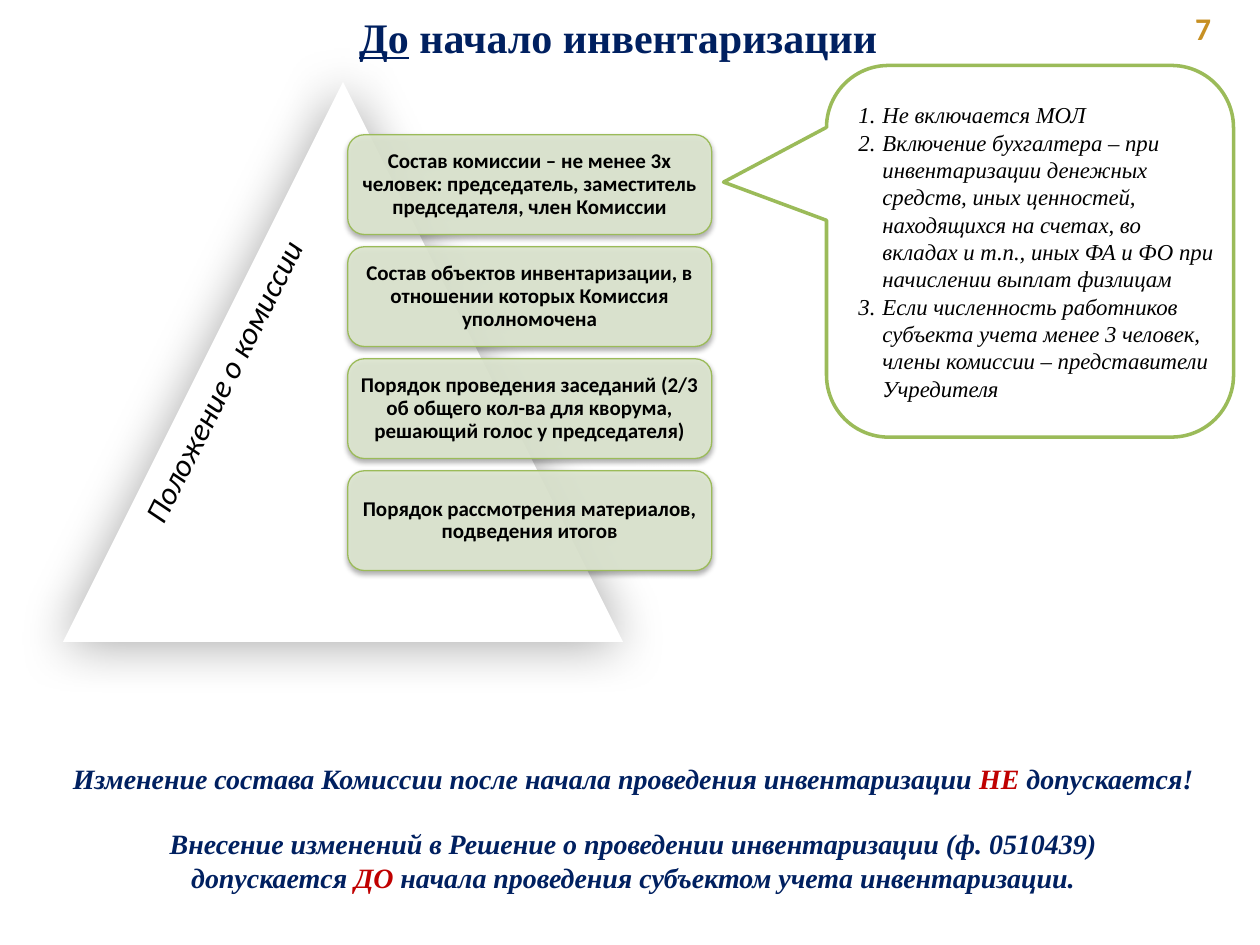
from lxml.etree import SubElement
from pptx import Presentation
from pptx.dml.color import RGBColor
from pptx.enum.shapes import MSO_SHAPE
from pptx.enum.text import MSO_ANCHOR, MSO_AUTO_SIZE, PP_ALIGN
from pptx.oxml.ns import qn
from pptx.util import Pt

NAVY = RGBColor(0x00, 0x20, 0x60)
RED = RGBColor(0xC0, 0x00, 0x00)
GOLD = RGBColor(0xC7, 0x90, 0x23)
GREEN = RGBColor(0x9B, 0xBB, 0x59)
PALE_GREEN = RGBColor(0xDE, 0xE7, 0xD1)
BLACK = RGBColor(0x00, 0x00, 0x00)
WHITE = RGBColor(0xFF, 0xFF, 0xFF)
SERIF = "Times New Roman"
SANS = "Calibri"

CARDS = [
    "Состав комиссии – не менее 3х человек: председатель, заместитель председателя, член Комиссии",
    "Состав объектов инвентаризации, в отношении которых Комиссия уполномочена",
    "Порядок проведения заседаний (2/3 об общего кол-ва для кворума, решающий голос у председателя)",
    "Порядок рассмотрения материалов, подведения итогов",
]
RULES = [
    "Не включается МОЛ",
    "Включение бухгалтера – при инвентаризации денежных средств, иных ценностей, "
    "находящихся на счетах, во вкладах и т.п., иных ФА и ФО при начислении выплат физлицам",
    "Если численность работников субъекта учета менее 3 человек, "
    "члены комиссии – представители Учредителя",
]
NOTICE = [
    (0, [("Изменение состава Комиссии после начала проведения инвентаризации ", NAVY),
         ("НЕ ", RED), ("допускается!", NAVY)]),
    (18.4, [("Внесение изменений в Решение о проведении инвентаризации (ф. 0510439)", NAVY)]),
    (0, [("допускается ", NAVY), ("ДО", RED),
         (" начала проведения субъектом учета инвентаризации.", NAVY)]),
]


def add_span(para, text, font, size, color, bold=False, italic=False, underline=False):
    span = para.add_run()
    span.text = text
    span.font.name = font
    span.font.size = Pt(size)
    span.font.color.rgb = color
    span.font.bold = bold
    span.font.italic = italic
    span.font.underline = underline


def add_para(frame, index, align):
    para = frame.add_paragraph() if index else frame.paragraphs[0]
    para.alignment = align
    return para


def set_list_format(para, kind, margin=0, indent=0, **attributes):
    properties = para._p.get_or_add_pPr()
    properties.set("marL", str(Pt(margin)))
    properties.set("indent", str(Pt(indent)))
    SubElement(properties, qn(kind), **attributes)


def place(box, left, top, width, height):
    box.left, box.top, box.width, box.height = Pt(left), Pt(top), Pt(width), Pt(height)


def set_frame(box, anchor=MSO_ANCHOR.TOP, inset=None):
    frame = box.text_frame
    frame.word_wrap = True
    frame.auto_size = MSO_AUTO_SIZE.NONE
    frame.vertical_anchor = anchor
    if inset is not None:
        frame.margin_left = frame.margin_right = Pt(inset)
        frame.margin_top = frame.margin_bottom = Pt(inset)
    return frame


def add_shape(page, kind, bounds, fill, line_width=0):
    shape = page.shapes.add_shape(kind, *map(Pt, bounds))
    shape.fill.solid()
    shape.fill.fore_color.rgb = fill
    if line_width:
        shape.line.color.rgb = GREEN
        shape.line.width = Pt(line_width)
    else:
        shape.line.fill.background()
    shape.shadow.inherit = False
    return shape


def add_shadow(shape, blur):
    effects = shape._element.spPr.find(qn("a:effectLst"))
    shadow = SubElement(effects, qn("a:outerShdw"), blurRad=str(Pt(blur)),
                        dist=str(Pt(1.8)), dir="5400000", rotWithShape="0")
    color = SubElement(shadow, qn("a:srgbClr"), val=str(BLACK))
    SubElement(color, qn("a:alpha"), val="35000")


def add_label(page, bounds, text, color, rotation=0, **style):
    box = page.shapes.add_textbox(*map(Pt, bounds))
    box.rotation = rotation
    para = add_para(set_frame(box), 0, PP_ALIGN.LEFT)
    add_span(para, text, SANS, 18, color, **style)


def add_card(page, top, text):
    card = add_shape(page, MSO_SHAPE.ROUNDED_RECTANGLE, (198.7, top, 208, 57), PALE_GREEN, 0.75)
    color = card._element.spPr.find(qn("a:solidFill")).find(qn("a:srgbClr"))
    SubElement(color, qn("a:alpha"), val="90000")
    add_shadow(card, 3.1)
    para = add_para(set_frame(card, MSO_ANCHOR.MIDDLE, 3.6), 0, PP_ALIGN.CENTER)
    para.line_spacing = 0.9
    add_span(para, text, SANS, 12, BLACK, bold=True)


def add_callout(page):
    callout = add_shape(page, MSO_SHAPE.ROUNDED_RECTANGULAR_CALLOUT,
                        (472.3, 37.4, 232.6, 212.4), WHITE, 2)
    for index, value in enumerate((-0.753, -0.186, 0.167)):
        callout.adjustments[index] = value
    frame = set_frame(callout, MSO_ANCHOR.MIDDLE, 0)
    for index, text in enumerate(RULES):
        para = add_para(frame, index, PP_ALIGN.LEFT)
        set_list_format(para, "a:buAutoNum", 21.6, -13.7, type="arabicPeriod")
        add_span(para, text, SERIF, 13, BLACK, italic=True)


def fill_title(title):
    place(title, 56.9, 2.9, 592.6, 36)
    para = add_para(set_frame(title), 0, PP_ALIGN.CENTER)
    add_span(para, "До", SERIF, 24, NAVY, bold=True, underline=True)
    add_span(para, " начало инвентаризации", SERIF, 24, NAVY, bold=True)


def fill_notice(body):
    place(body, 28.1, 431.3, 667.4, 87.8)
    frame = set_frame(body)
    for index, (gap, spans) in enumerate(NOTICE):
        para = add_para(frame, index, PP_ALIGN.CENTER)
        para.space_before = Pt(gap)
        set_list_format(para, "a:buNone")
        for text, color in spans:
            add_span(para, text, SERIF, 16, color, bold=True, italic=True)


def main():
    deck = Presentation()
    deck.slide_width, deck.slide_height = Pt(720), Pt(540)
    page = deck.slides.add_slide(deck.slide_layouts[1])
    fill_title(page.shapes.title)
    fill_notice(page.placeholders[1])
    add_label(page, (671.8, 1.4, 43.2, 28.8), " 7", GOLD, bold=True)
    add_callout(page)
    triangle = add_shape(page, MSO_SHAPE.ISOSCELES_TRIANGLE, (36, 46.8, 320, 320), WHITE)
    add_shadow(triangle, 30)
    for index, text in enumerate(CARDS):
        add_card(page, 77 + 64 * index, text)
    add_label(page, (24.5, 192.2, 216.7, 28.8), "Положение о комиссии", BLACK,
              rotation=296.8, italic=True)
    deck.save("out.pptx")


if __name__ == "__main__":
    main()
